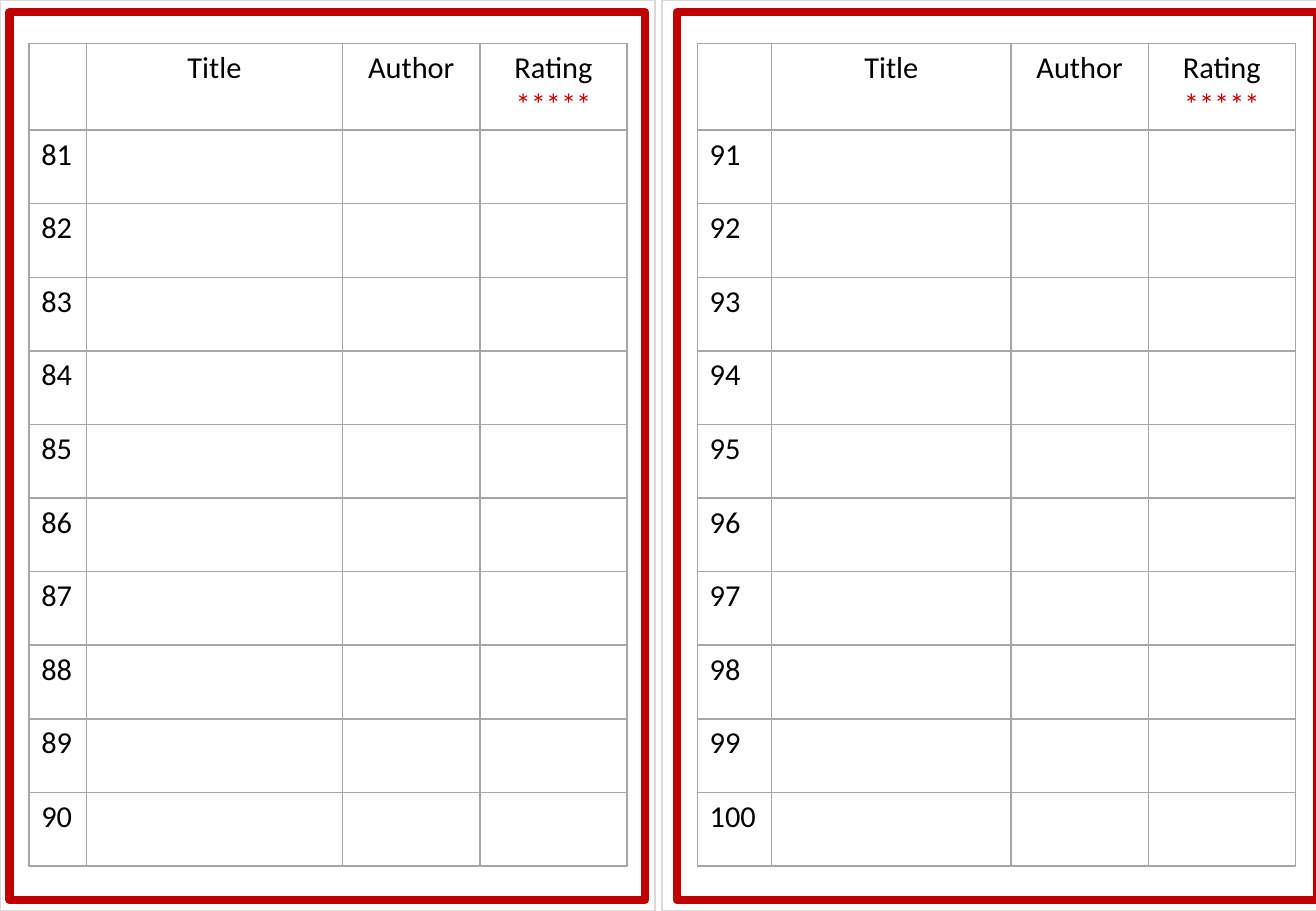
from lxml import etree
from pptx import Presentation
from pptx.dml.color import RGBColor
from pptx.enum.shapes import MSO_SHAPE
from pptx.enum.text import PP_ALIGN
from pptx.oxml.ns import qn
from pptx.util import Inches, Pt

RECT = MSO_SHAPE.RECTANGLE
LEFT, CENTER = PP_ALIGN.LEFT, PP_ALIGN.CENTER
FONT = "Calibri"
BLACK, RED, GRAY, PALE = "000000", "C00000", "A6A6A6", "D9D9D9"
TOP, HEIGHT = 0.36, 6.77
HEAD = 0.71
BOOKS = 10


def rgb(code):
    return RGBColor.from_string(code)


def add_frame(slide, left, top, width, height, color, weight):
    box = slide.shapes.add_shape(
        RECT, Inches(left), Inches(top), Inches(width), Inches(height))
    box.shadow.inherit = False
    box.fill.background()
    box.line.color.rgb = rgb(color)
    box.line.width = Pt(weight)


def write(para, text, size=18, color=BLACK, align=LEFT):
    para.alignment = align
    run = para.add_run()
    run.text = text
    run.font.name = FONT
    run.font.size = Pt(size)
    run.font.color.rgb = rgb(color)


def style_cell(cell):
    # Borders come before the fill in the cell properties
    props = cell._tc.get_or_add_tcPr()
    for side in ("lnL", "lnR", "lnT", "lnB"):
        line = etree.SubElement(props, qn("a:" + side), w=str(Pt(1)))
        fill = etree.SubElement(line, qn("a:solidFill"))
        etree.SubElement(fill, qn("a:srgbClr"), val=GRAY)
    cell.fill.background()


def add_log(slide, left, widths, first):
    table = slide.shapes.add_table(
        BOOKS + 1, len(widths), Inches(left), Inches(TOP),
        Inches(sum(widths)), Inches(HEIGHT)).table
    table.first_row = table.horz_banding = False

    # Grid
    for col, width in zip(table.columns, widths):
        col.width = Inches(width)
    for row in table.rows:
        row.height = Inches((HEIGHT - HEAD) / BOOKS)
    table.rows[0].height = Inches(HEAD)
    for cell in table.iter_cells():
        style_cell(cell)

    # Headings
    for col, name in enumerate(("Title", "Author", "Rating"), 1):
        write(table.cell(0, col).text_frame.paragraphs[0], name, align=CENTER)
    stars = table.cell(0, 3).text_frame.add_paragraph()
    write(stars, "*****", color=RED, align=CENTER)

    # Book numbers
    for row in range(BOOKS):
        para = table.cell(row + 1, 0).text_frame.paragraphs[0]
        write(para, str(first + row))


def main():
    deck = Presentation()
    deck.slide_width, deck.slide_height = Inches(10.83), Inches(7.5)
    slide = deck.slides.add_slide(deck.slide_layouts[6])

    # Page outlines and red frames
    for left in (0, 5.45):
        add_frame(slide, left, 0, 5.39, 7.5, PALE, 1)
    for left, width in ((5.57, 5.27), (0.08, 5.23)):
        add_frame(slide, left, 0.1, width, 7.31, RED, 5)

    # Reading logs
    add_log(slide, 5.74, (0.61, 1.97, 1.13, 1.21), 91)
    add_log(slide, 0.24, (0.47, 2.11, 1.13, 1.21), 81)

    deck.save("out.pptx")


if __name__ == "__main__":
    main()
